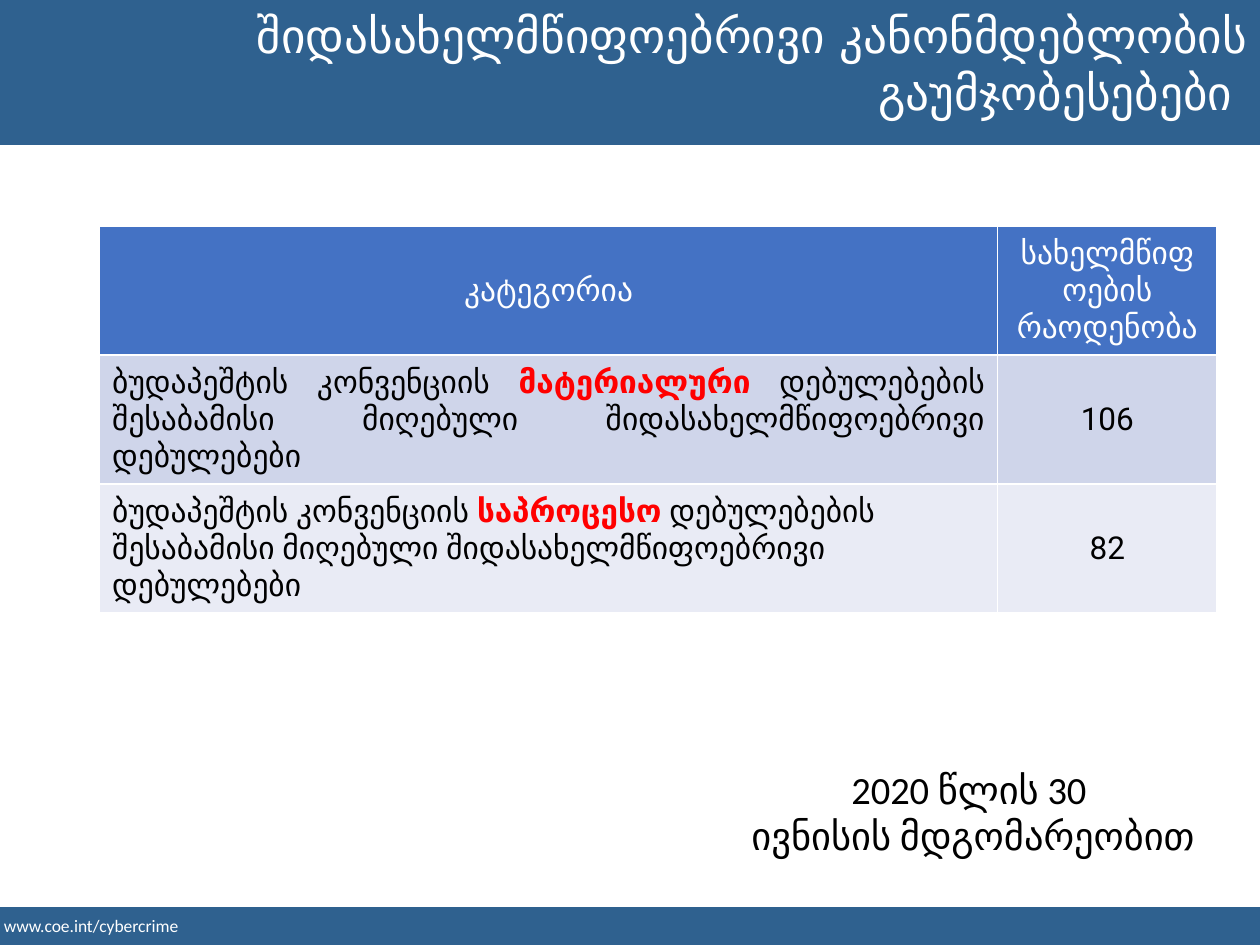
from pptx import Presentation
from pptx.dml.color import RGBColor
from pptx.enum.shapes import MSO_SHAPE as Shape
from pptx.enum.text import MSO_ANCHOR as Anchor, MSO_AUTO_SIZE as AutoSize, PP_ALIGN as Align
from pptx.util import Inches, Pt

WIDTH, HEIGHT = Inches(10), Inches(7.5)
BAND, WHITE, BLACK, RED = "2F618F", "FFFFFF", "000000", "FF0000"
HEADER_FILL, ROW_FILLS = "4472C4", ("CFD5EA", "E9EBF5")
TITLE = {"name": "DejaVu Sans", "size": Pt(27), "bold": False, "color": WHITE}
FOOTER = {"name": "Calibri", "size": Pt(10), "color": WHITE}
DATE = {"name": "Calibri", "size": Pt(22), "color": BLACK}
HEADING = {"name": "Roboto", "size": Pt(18), "bold": False, "color": WHITE}
BODY = HEADING | {"color": BLACK}
STRONG = BODY | {"bold": True, "color": RED}

CONVENTION = "ბუდაპეშტის კონვენციის "
PROVISIONS = "დებულებების შესაბამისი მიღებული შიდასახელმწიფოებრივი დებულებები"
HEADINGS = ("კატეგორია", "სახელმწიფოების რაოდენობა")
ROWS = (("მატერიალური ", "106", Align.JUSTIFY), ("საპროცესო ", "82", Align.LEFT))


def rgb(color):
    return RGBColor.from_string(color)


def place(left, top, width, height):
    """Turn percentages of the slide's size into lengths."""
    return (int(WIDTH * left / 100), int(HEIGHT * top / 100),
            int(WIDTH * width / 100), int(HEIGHT * height / 100))


def write(para, spans, align=Align.LEFT):
    """Fill a paragraph with (text, format) pairs."""
    para.alignment = align
    for text, style in spans:
        span = para.add_run()
        span.text = text
        for key, value in style.items():
            if key == "color":
                span.font.color.rgb = rgb(value)
            else:
                setattr(span.font, key, value)


def add_band(page, box):
    band = page.shapes.add_shape(Shape.RECTANGLE, *place(*box))
    band.shadow.inherit = False
    band.fill.solid()
    band.fill.fore_color.rgb = rgb(BAND)
    band.line.fill.background()


def add_title(page, box):
    """Format the title placeholder and lift it above the bands."""
    title = page.shapes.title
    title.left, title.top, title.width, title.height = place(*box)
    frame = title.text_frame
    frame.word_wrap, frame.auto_size = True, AutoSize.NONE
    frame.vertical_anchor = Anchor.TOP
    write(frame.paragraphs[0],
          [("შიდასახელმწიფოებრივი კანონმდებლობის გაუმჯობესებები ", TITLE)], Align.RIGHT)
    page.shapes._spTree.append(title._element)


def add_text(page, box, lines, style, align=Align.LEFT, inset=0.1):
    frame = page.shapes.add_textbox(*place(*box)).text_frame
    frame.word_wrap = True
    frame.margin_left = Inches(inset)
    for index, line in enumerate(lines):
        para = frame.add_paragraph() if index else frame.paragraphs[0]
        write(para, [(line, style)], align)


def format_cell(cell, fill, spans, align=Align.CENTER):
    cell.fill.solid()
    cell.fill.fore_color.rgb = rgb(fill)
    cell.vertical_anchor = Anchor.MIDDLE
    write(cell.text_frame.paragraphs[0], spans, align)


def add_provisions_table(page, box, first_share):
    """Add the table; its default style draws the white borders."""
    left, top, width, height = place(*box)
    table = page.shapes.add_table(len(ROWS) + 1, 2, left, top, width, height).table
    for column, share in zip(table.columns, (first_share, 1 - first_share)):
        column.width = int(width * share)
    for index, heading in enumerate(HEADINGS):
        format_cell(table.cell(0, index), HEADER_FILL, [(heading, HEADING)])
    for index, ((kind, count, align), fill) in enumerate(zip(ROWS, ROW_FILLS), 1):
        category = [(CONVENTION, BODY), (kind, STRONG), (PROVISIONS, BODY)]
        format_cell(table.cell(index, 0), fill, category, align)
        format_cell(table.cell(index, 1), fill, [(count, BODY)])


def main():
    deck = Presentation()
    deck.slide_width, deck.slide_height = WIDTH, HEIGHT
    page = deck.slides.add_slide(deck.slide_layouts.get_by_name("Title Only"))
    add_band(page, (0, 0, 100, 15.33))
    add_band(page, (0, 96, 100, 4))
    add_text(page, (0, 96.13, 34.5, 3.6), ["www.coe.int/cybercrime"], FOOTER, inset=0.03)
    add_title(page, (14.9, 0, 85.1, 15.33))
    add_provisions_table(page, (7.9, 23.93, 88.7, 40.93), 0.8035)
    add_text(page, (57.9, 80.4, 38.7, 11.2),
             ["2020 წლის 30 ", "ივნისის მდგომარეობით"], DATE, Align.CENTER)
    deck.save("out.pptx")


if __name__ == "__main__":
    main()
